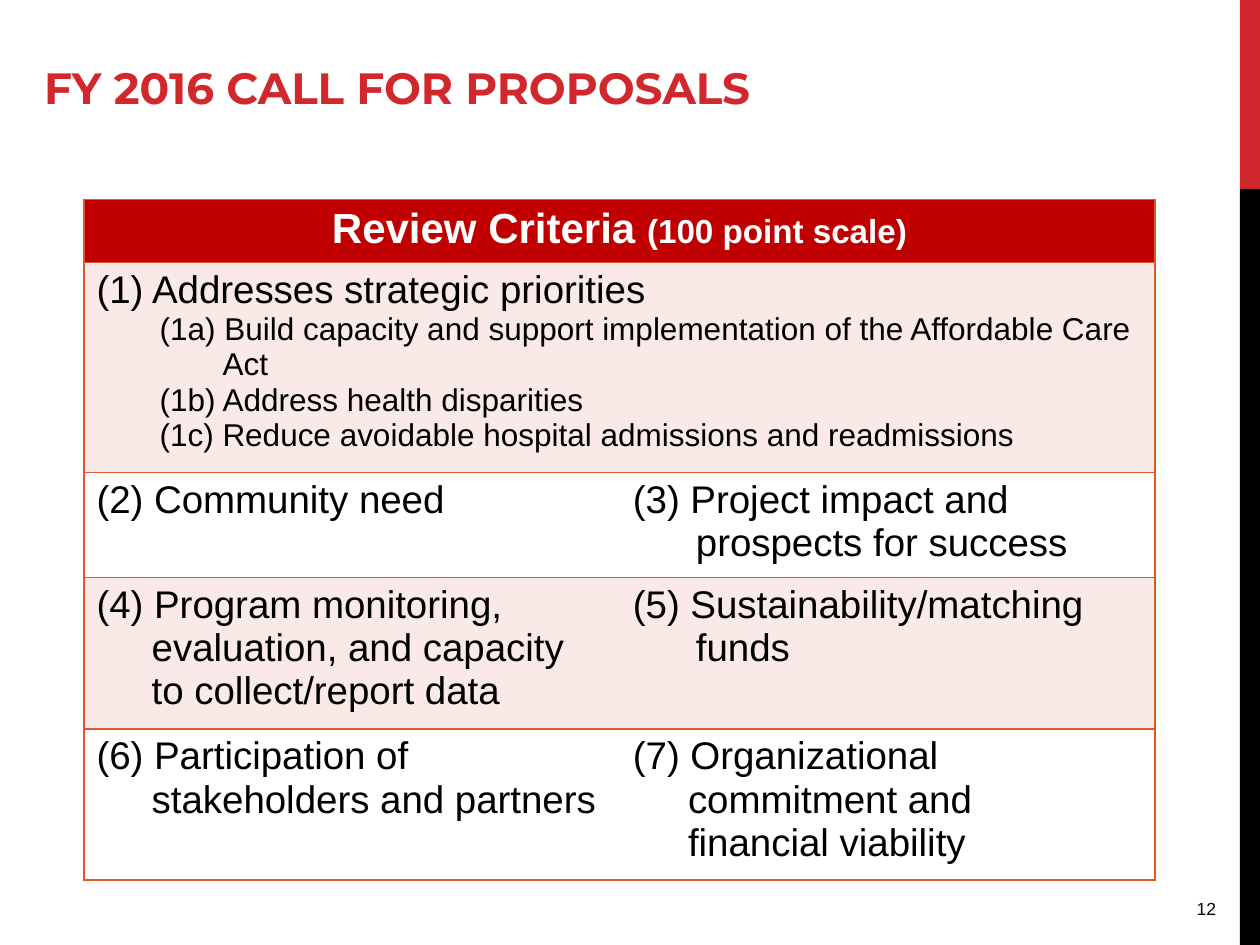
from dataclasses import dataclass

from lxml.etree import SubElement
from pptx import Presentation
from pptx.dml.color import RGBColor
from pptx.enum.shapes import MSO_SHAPE
from pptx.enum.text import MSO_ANCHOR, MSO_AUTO_SIZE, PP_ALIGN
from pptx.oxml import parse_xml
from pptx.oxml.ns import nsdecls, qn
from pptx.util import Pt


@dataclass(frozen=True)
class Theme:
    red: str = "D1282E"
    black: str = "000000"
    white: str = "FFFFFF"
    header: str = "C00000"
    tint: str = "F9EAE8"
    border: str = "DC5924"
    title_font: str = "Montserrat"
    body_font: str = "Arial"
    title_size: float = 25
    header_size: float = 24
    scale_size: float = 19
    criterion_size: float = 22
    detail_size: float = 18
    number_size: float = 10


@dataclass(frozen=True)
class Line:
    """One table paragraph; left and hang are its indents in points."""
    text: str
    left: float = 0
    hang: float = 0
    size: float = Theme.criterion_size


@dataclass(frozen=True)
class Row:
    """A table row; a single cell spans both columns."""
    height: float
    fill: str
    cells: tuple[tuple[Line, ...], ...]


THEME = Theme()
DETAIL = THEME.detail_size
ROWS = (
    Row(112, THEME.tint, ((
        Line("(1) Addresses strategic priorities"),
        Line("(1a) Build capacity and support implementation of the Affordable Care Act",
             72, 36, DETAIL),
        Line("(1b) Address health disparities", 36, 0, DETAIL),
        Line("(1c) Reduce avoidable hospital admissions and readmissions", 36, 0, DETAIL),
    ),)),
    Row(56, THEME.white, (
        (Line("(2) Community need"),),
        (Line("(3) Project impact and prospects for success", 36, 36),),
    )),
    Row(81, THEME.tint, (
        (Line("(4) Program monitoring, evaluation, and capacity \vto collect/report data",
              31.5, 31.5),),
        (Line("(5) Sustainability/matching funds", 36, 36),),
    )),
    Row(81, THEME.white, (
        (Line("(6) Participation of stakeholders and partners", 31.5, 31.5),),
        (Line("(7) Organizational commitment and \vfinancial viability", 31.5, 31.5),),
    )),
)
HEADER_HEIGHT = 36
COLUMN_WIDTHS = (306.5, 305.5)


def color(code: str) -> RGBColor:
    return RGBColor.from_string(code)


def set_font(font, name: str, size: float, code: str, bold: bool = False) -> None:
    font.name, font.size, font.bold = name, Pt(size), bold
    font.color.rgb = color(code)


def add_bar(page, top: float, height: float, code: str) -> None:
    bar = page.shapes.add_shape(MSO_SHAPE.RECTANGLE, Pt(708.5), Pt(top), Pt(11.5), Pt(height))
    bar.shadow.inherit = False
    bar.fill.solid()
    bar.fill.fore_color.rgb = color(code)
    bar.line.fill.background()


def style_cell(cell, fill: str, sides: str) -> None:
    """Fill the cell and rule only the named sides (L, R, T, B)."""
    cell.fill.solid()
    cell.fill.fore_color.rgb = color(fill)
    properties = cell._tc.get_or_add_tcPr()
    for position, side in enumerate("LRTB"):
        edge = parse_xml(f'<a:ln{side} {nsdecls("a")} w="{Pt(1)}"/>')
        if side in sides:
            paint = SubElement(edge, qn("a:solidFill"))
            SubElement(paint, qn("a:srgbClr"), val=THEME.border)
        else:
            SubElement(edge, qn("a:noFill"))
        properties.insert(position, edge)


def write_lines(cell, lines: tuple[Line, ...]) -> None:
    frame = cell.text_frame
    for index, line in enumerate(lines):
        para = frame.add_paragraph() if index else frame.paragraphs[0]
        para.text = line.text
        properties = para._p.get_or_add_pPr()
        properties.set("marL", str(Pt(line.left)))
        properties.set("indent", str(-Pt(line.hang)))
        set_font(para.font, THEME.body_font, line.size, THEME.black)


def add_title(page) -> None:
    title = page.shapes.title
    title.left, title.top, title.width, title.height = Pt(18), Pt(31), Pt(468), Pt(59)
    frame = title.text_frame
    frame.text = "FY 2016 CALL FOR PROPOSALS"
    frame.auto_size = MSO_AUTO_SIZE.NONE
    frame.vertical_anchor = MSO_ANCHOR.TOP
    para = frame.paragraphs[0]
    para.alignment = PP_ALIGN.LEFT
    set_font(para.font, THEME.title_font, THEME.title_size, THEME.red, True)


def add_criteria_table(page) -> None:
    height = HEADER_HEIGHT + sum(row.height for row in ROWS)
    table = page.shapes.add_table(len(ROWS) + 1, 2, Pt(48), Pt(114),
                                  Pt(sum(COLUMN_WIDTHS)), Pt(height)).table
    table.first_row = table.horz_banding = False
    for column, width in zip(table.columns, COLUMN_WIDTHS):
        column.width = Pt(width)

    # Header
    table.rows[0].height = Pt(HEADER_HEIGHT)
    header = table.cell(0, 0)
    header.merge(table.cell(0, 1))
    style_cell(header, THEME.header, "LRTB")
    style_cell(table.cell(0, 1), THEME.header, "RTB")
    para = header.text_frame.paragraphs[0]
    para.alignment = PP_ALIGN.CENTER
    for text, size in (("Review Criteria ", THEME.header_size),
                       ("(100 point scale)", THEME.scale_size)):
        span = para.add_run()
        span.text = text
        set_font(span.font, THEME.body_font, size, THEME.white, True)

    # Criteria
    for number, row in enumerate(ROWS, start=1):
        table.rows[number].height = Pt(row.height)
        left, right = table.cell(number, 0), table.cell(number, 1)
        spans = len(row.cells) == 1
        if spans:
            left.merge(right)
        style_cell(left, row.fill, "LRTB" if spans else "LTB")
        style_cell(right, row.fill, "RTB")
        for cell, lines in zip((left, right), row.cells):
            write_lines(cell, lines)


def add_page_number(page) -> None:
    box = page.shapes.add_textbox(Pt(660), Pt(510), Pt(42), Pt(18))
    frame = box.text_frame
    frame.word_wrap = True
    frame.vertical_anchor = MSO_ANCHOR.MIDDLE
    para = frame.paragraphs[0]
    para.text = "12"
    para.alignment = PP_ALIGN.RIGHT
    set_font(para.font, THEME.body_font, THEME.number_size, THEME.black)


def main() -> None:
    deck = Presentation()
    deck.slide_width, deck.slide_height = Pt(720), Pt(540)
    page = deck.slides.add_slide(deck.slide_layouts[5])
    # Side stripe
    add_bar(page, 0, 108, THEME.red)
    add_bar(page, 108, 432, THEME.black)
    add_page_number(page)
    add_title(page)
    add_criteria_table(page)
    deck.save("out.pptx")


if __name__ == "__main__":
    main()
